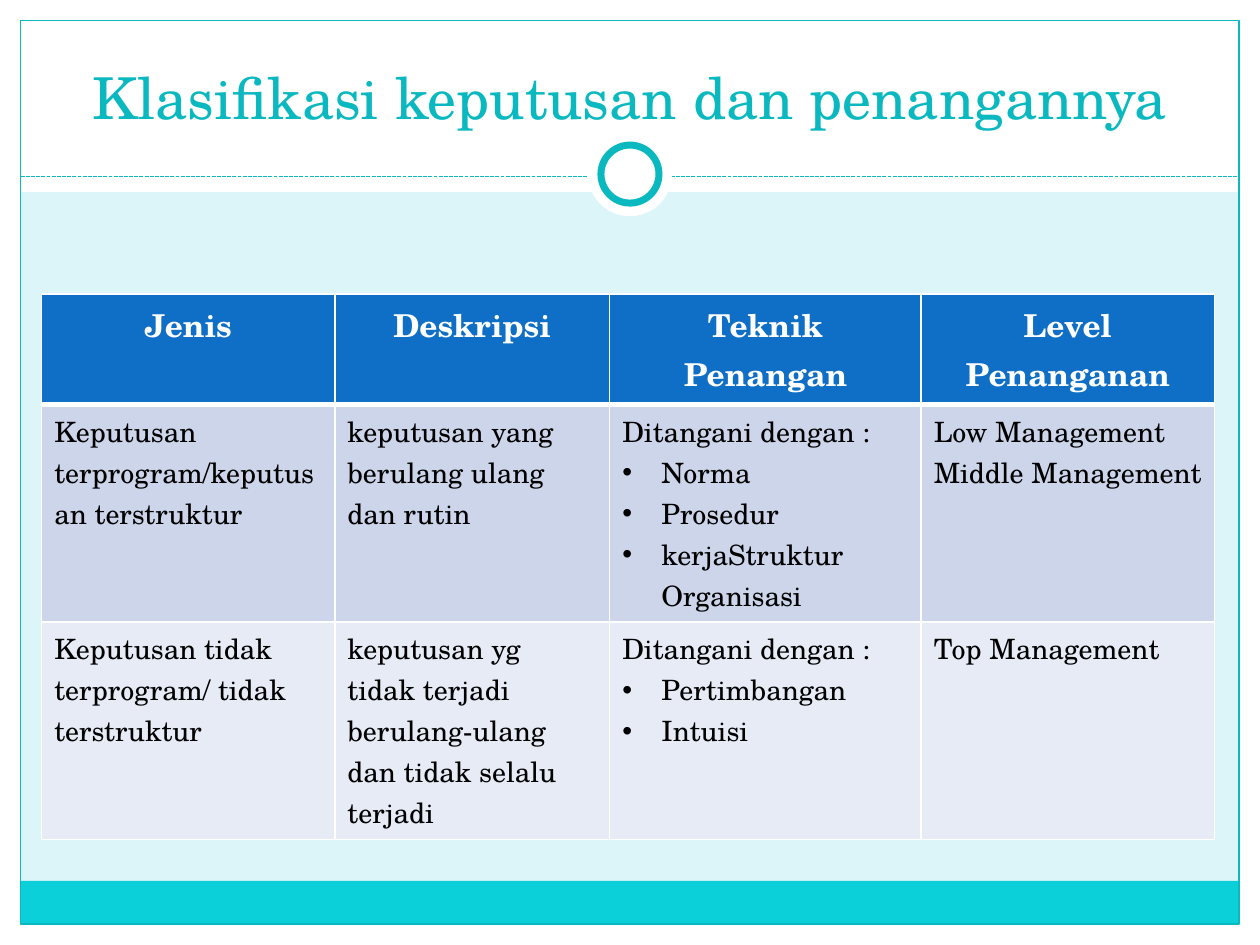
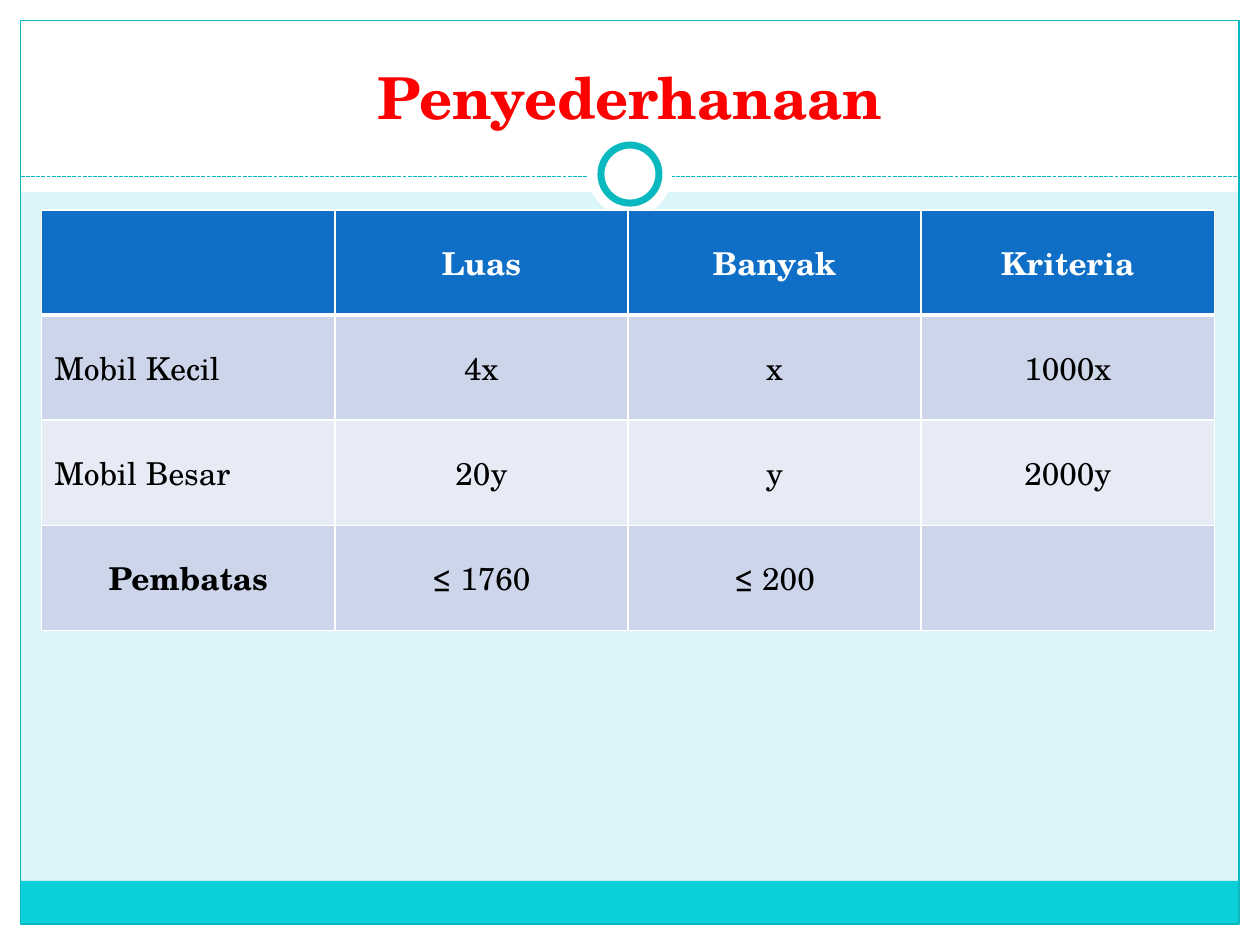
"""Build two table slides that share one framed title layout."""
from lxml import etree
from pptx import Presentation
from pptx.dml.color import RGBColor
from pptx.enum.dml import MSO_LINE
from pptx.enum.shapes import MSO_CONNECTOR, MSO_SHAPE
from pptx.enum.text import MSO_ANCHOR, MSO_AUTO_SIZE, PP_ALIGN
from pptx.oxml.ns import qn
from pptx.util import Cm, Pt

RECT, OVAL = MSO_SHAPE.RECTANGLE, MSO_SHAPE.OVAL
LINE, DASH = MSO_CONNECTOR.STRAIGHT, MSO_LINE.SQUARE_DOT
LEFT, MID = PP_ALIGN.LEFT, PP_ALIGN.CENTER
TOP, HALF, BASE = MSO_ANCHOR.TOP, MSO_ANCHOR.MIDDLE, MSO_ANCHOR.BOTTOM
FIXED = MSO_AUTO_SIZE.NONE

FONT = "TeX Gyre Schola"
HUES = {
    "page": "DBF5F9", "white": "FFFFFF", "black": "000000", "red": "FF0000",
    "teal": "0AB8BF", "aqua": "0BD0D9", "head": "0F6FC6",
    "odd": "CCD5EA", "even": "E7EBF5",
}
WIDE, HIGH, EDGE = 25.4, 19.05, 0.42
SIDE = 0.84
RULE, RING = 3.56, 3.51
BULLET = "• "


def hue(name):
    """Return the named colour."""
    return RGBColor.from_string(HUES[name])


def style(para, align, color, **looks):
    """Format a paragraph and its font."""
    para.alignment = align
    para.font.color.rgb = hue(color)
    for key, value in {"name": FONT, **looks}.items():
        setattr(para.font, key, value)


def form(slide, kind, box, fill=None, line=None, width=0.75):
    """Add a plain preset shape."""
    shape = slide.shapes.add_shape(kind, *map(Cm, box))
    shape.shadow.inherit = False
    if fill:
        shape.fill.solid()
        shape.fill.fore_color.rgb = hue(fill)
    else:
        shape.fill.background()
    if line:
        shape.line.color.rgb = hue(line)
        shape.line.width = Pt(width)
    else:
        shape.line.fill.background()
    return shape


def dashes(slide):
    """Add the dashed rule below the title."""
    rule = slide.shapes.add_connector(
        LINE, Cm(EDGE), Cm(RULE), Cm(WIDE - EDGE), Cm(RULE))
    rule.line.color.rgb = hue("teal")
    rule.line.width = Pt(0.75)
    rule.line.dash_style = DASH
    etree.SubElement(rule._element.spPr, qn("a:effectLst"))
    return rule


def disc(slide, size, **looks):
    """Add a circle centred on the ring's place."""
    box = (WIDE - size) / 2, RING - size / 2, size, size
    return form(slide, OVAL, box, "white", **looks)


def frame(slide, layout):
    """Draw the shared frame and hand it to the layout."""
    layout.background.fill.solid()
    layout.background.fill.fore_color.rgb = hue("page")
    inner = WIDE - 2 * EDGE
    bands = [
        (0, HIGH - EDGE, WIDE, EDGE), (0, 0, WIDE, 3.87),
        (0, 0, EDGE, HIGH), (WIDE - EDGE, 0, EDGE, HIGH),
    ]
    parts = [form(slide, RECT, band, "white") for band in bands]
    parts += [
        form(slide, RECT, (EDGE, 17.76, inner, 0.87), "aqua"),
        form(slide, RECT, (EDGE, EDGE, inner, HIGH - 2 * EDGE), line="teal"),
        dashes(slide),
        disc(slide, 1.7),
        disc(slide, 1.17, line="teal", width=4),
    ]
    for num, part in enumerate(parts, 20):
        part._element.xpath(".//p:cNvPr")[0].set("id", str(num))
        layout.shapes._spTree.append(part._element)


def head(slide, text, color, bold=False):
    """Place and format the slide title."""
    title = slide.shapes.title
    box = {"left": SIDE, "top": 0.64, "width": WIDE - 2 * SIDE, "height": 2.12}
    for key, value in box.items():
        setattr(title, key, Cm(value))
    body = title.text_frame
    body.text = text
    body.auto_size = FIXED
    body.vertical_anchor = BASE
    style(body.paragraphs[0], MID, color, size=Pt(33), bold=bold)


def edges(cell, row):
    """Draw white borders, heavy below the header row."""
    props = cell._tc.get_or_add_tcPr()
    heavy = {0: "lnB", 1: "lnT"}.get(row)
    for spot, tag in enumerate(("lnL", "lnR", "lnT", "lnB")):
        line = etree.Element(qn(f"a:{tag}"), w=str(Pt(3 if tag == heavy else 1)))
        fill = etree.SubElement(line, qn("a:solidFill"))
        etree.SubElement(fill, qn("a:srgbClr"), val=HUES["white"])
        props.insert(spot, line)


def dot(para):
    """Give a paragraph a hanging bullet."""
    props = para._p.get_or_add_pPr()
    props.set("marL", str(Cm(0.79)))
    props.set("indent", str(-Cm(0.79)))
    etree.SubElement(props, qn("a:buFont"), typeface="Arial")
    mark = etree.SubElement(props, qn("a:buChar"))
    mark.set("char", BULLET.strip())


def write(cell, lines, align, color, **looks):
    """Fill a cell with one paragraph per line."""
    body = cell.text_frame
    for num, line in enumerate(lines):
        para = body.add_paragraph() if num else body.paragraphs[0]
        para.text = line.removeprefix(BULLET)
        style(para, align, color, **looks)
        if line.startswith(BULLET):
            dot(para)


def grid(slide, top, cols, rows, data, size, anchor, aligns):
    """Add a table with a header and striped rows."""
    table = slide.shapes.add_table(
        len(rows), len(cols), Cm(SIDE), Cm(top),
        Cm(sum(cols)), Cm(sum(rows))).table
    for col, width in zip(table.columns, cols):
        col.width = Cm(width)
    for num, (row, high, texts) in enumerate(zip(table.rows, rows, data)):
        row.height = Cm(high)
        tint = "head" if num == 0 else "odd" if num % 2 else "even"
        for cell, text, align in zip(row.cells, texts, aligns):
            cell.fill.solid()
            cell.fill.fore_color.rgb = hue(tint)
            cell.vertical_anchor = anchor
            edges(cell, num)
            lines = [text] if isinstance(text, str) else text
            if num == 0:
                write(cell, lines, MID, "white", size=Pt(18), bold=True)
            else:
                write(cell, lines, align, "black", size=Pt(size), bold=False)
    return table


def kinds(slide):
    """Fill the slide on kinds of decision."""
    head(slide, "Klasifikasi keputusan dan penangannya", "teal")
    data = [
        ["Jenis", "Deskripsi", "Teknik Penangan", "Level Penanganan"],
        ["Keputusan terprogram/keputusan terstruktur",
         "keputusan yang berulang ulang dan rutin",
         ["Ditangani dengan :", "• Norma", "• Prosedur",
          "• kerjaStruktur Organisasi"],
         ["Low Management", "Middle Management"]],
        ["Keputusan tidak terprogram/ tidak terstruktur",
         "keputusan yg  tidak terjadi berulang-ulang dan tidak selalu terjadi",
         ["Ditangani dengan :", "• Pertimbangan", "• Intuisi"],
         "Top Management"],
    ]
    grid(slide, 5.93, [5.91, 5.54, 6.28, 5.91], [2.2, 4.37, 4.37],
         data, 16, TOP, [LEFT] * 4)


def model(slide):
    """Fill the slide on the simplified model."""
    head(slide, "Penyederhanaan", "red", bold=True)
    data = [
        ["", "Luas", "Banyak", "Kriteria"],
        ["Mobil Kecil", "4x", "x", "1000x"],
        ["Mobil Besar", "20y", "y", "2000y"],
        ["Pembatas", "≤ 1760", "≤ 200", ""],
    ]
    table = grid(slide, 4.23, [5.91] * 4, [2.12] * 4,
                 data, 18, HALF, [LEFT] + [MID] * 3)
    limit = table.cell(3, 0).text_frame.paragraphs[0]
    style(limit, MID, "black", bold=True)


def main():
    """Build and save the deck."""
    deck = Presentation()
    deck.slide_width, deck.slide_height = Cm(WIDE), Cm(HIGH)
    layout = deck.slide_layouts[5]
    first, second = [deck.slides.add_slide(layout) for _ in range(2)]
    frame(first, layout)
    kinds(first)
    model(second)
    deck.save("out.pptx")


if __name__ == "__main__":
    main()
